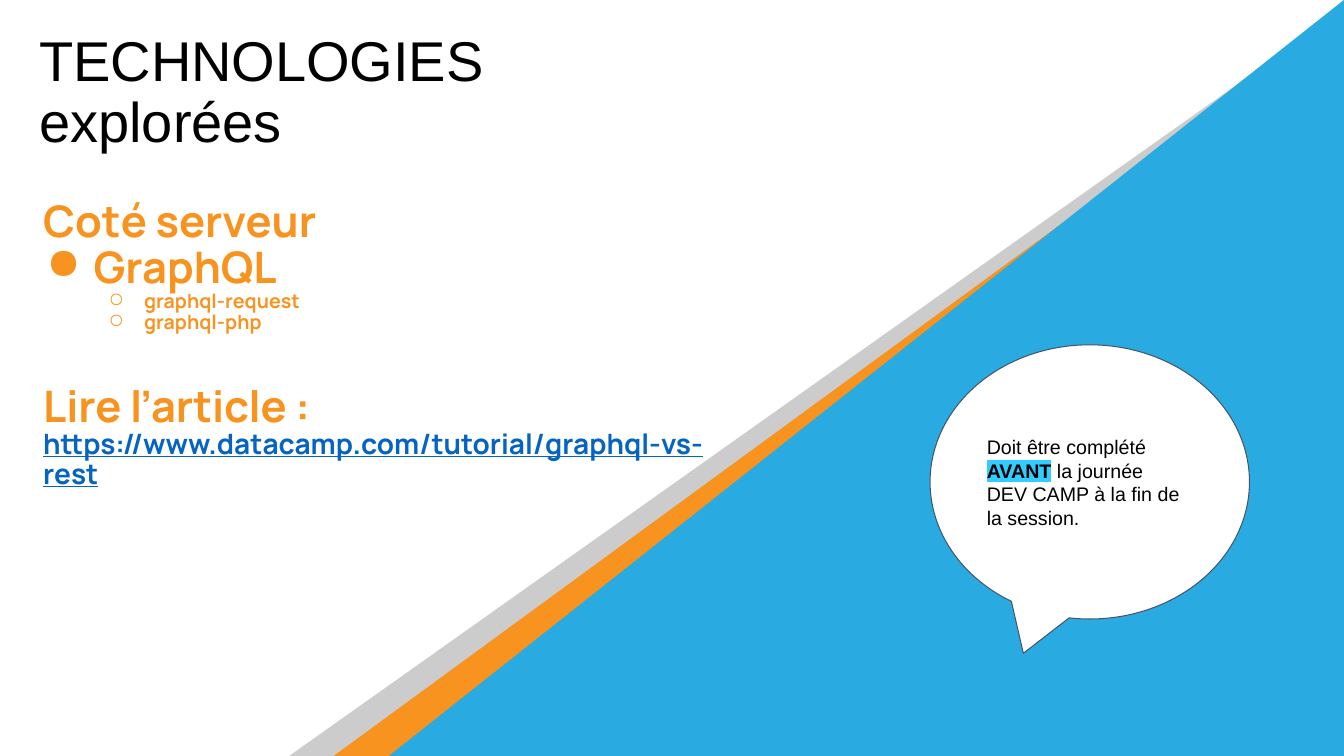
from dataclasses import dataclass

from lxml.etree import SubElement
from pptx import Presentation
from pptx.dml.color import RGBColor
from pptx.enum.shapes import MSO_SHAPE
from pptx.enum.text import MSO_ANCHOR, MSO_AUTO_SIZE, PP_ALIGN
from pptx.oxml.ns import qn
from pptx.util import Cm, Pt


@dataclass(frozen=True)
class Theme:
    black: str = "000000"
    white: str = "FFFFFF"
    grey: str = "CCCCCC"
    orange: str = "F7931E"
    blue: str = "29ABE2"
    link: str = "0563C1"
    outline: str = "44546A"
    highlight: str = "33CCFF"
    sans: str = "Arial"
    display: str = "Manrope"
    title_size: int = 40
    heading_size: int = 31
    link_size: int = 20
    small_size: int = 14


THEME = Theme()
TITLE_ONLY = 5


def set_font(font, name, size, color, bold=False):
    font.name, font.size, font.bold = name, Pt(size), bold
    font.color.rgb = RGBColor.from_string(color)


def fill_shape(shape, color):
    shape.shadow.inherit = False
    shape.fill.solid()
    shape.fill.fore_color.rgb = RGBColor.from_string(color)


def set_margins(frame, margin):
    frame.margin_left = frame.margin_right = margin
    frame.margin_top = frame.margin_bottom = margin


def add_bullet(paragraph, symbol, indent, hanging):
    properties = paragraph._p.get_or_add_pPr()
    properties.set("marL", str(indent))
    properties.set("indent", str(-hanging))
    color = SubElement(properties, qn("a:buClr"))
    SubElement(color, qn("a:srgbClr")).set("val", THEME.orange)
    SubElement(properties, qn("a:buChar")).set("char", symbol)


def highlight_run(run, color):
    properties = run._r.get_or_add_rPr()
    highlight = SubElement(properties, qn("a:highlight"))
    SubElement(highlight, qn("a:srgbClr")).set("val", color)


def place_title(slide, left, top, width, height):
    title = slide.shapes.title
    title.left, title.top, title.width, title.height = left, top, width, height
    frame = title.text_frame
    frame.word_wrap = True
    frame.auto_size = MSO_AUTO_SIZE.NONE
    frame.vertical_anchor = MSO_ANCHOR.BOTTOM
    set_margins(frame, Cm(0.25))
    paragraph = frame.paragraphs[0]
    paragraph.text = "TECHNOLOGIES explorées"
    paragraph.alignment = PP_ALIGN.LEFT
    paragraph.line_spacing = 0.9
    set_font(paragraph.font, THEME.sans, THEME.title_size, THEME.black)


def add_diagonal_bands(slide, right, bottom):
    # Each band: left edge, gap to the right edge, top, colour
    bands = [
        (Cm(7.29), Cm(0.62), Cm(0.66), THEME.grey),
        (Cm(8.41), Cm(0.31), Cm(0.66), THEME.orange),
        (Cm(9.8), Cm(0), Cm(0), THEME.blue),
    ]
    for left, gap, top, color in bands:
        band = slide.shapes.add_shape(
            MSO_SHAPE.RIGHT_TRIANGLE, left, top, right - gap - left, bottom - top)
        band._element.spPr.find(qn("a:xfrm")).set("flipH", "1")
        fill_shape(band, color)
        band.line.fill.background()


def add_server_topics(slide, left, top, width, height):
    frame = slide.shapes.add_textbox(left, top, width, height).text_frame
    frame.word_wrap = True
    main_bullet = ("●", Cm(1.27), Cm(1.19))
    sub_bullet = ("○", Cm(2.54), Cm(0.89))
    # Each line: text, size, colour, level, bullet, space before
    lines = [
        ("Coté serveur", THEME.heading_size, THEME.orange, 0, None, 0),
        ("GraphQL", THEME.heading_size, THEME.orange, 0, main_bullet, 0),
        ("graphql-request", THEME.small_size, THEME.orange, 1, sub_bullet, 0),
        ("graphql-php", THEME.small_size, THEME.orange, 1, sub_bullet, 0),
        ("Lire l’article :", THEME.heading_size, THEME.orange, 0, None, 37),
        ("https://www.datacamp.com/tutorial/graphql-vs-rest",
         THEME.link_size, THEME.link, 0, None, 0),
    ]
    for index, (text, size, color, level, bullet, space) in enumerate(lines):
        paragraph = frame.add_paragraph() if index else frame.paragraphs[0]
        paragraph.text = text
        paragraph.level = level
        if bullet:
            add_bullet(paragraph, *bullet)
        paragraph.alignment = PP_ALIGN.JUSTIFY
        paragraph.line_spacing = 0.88
        paragraph.space_before = Pt(space)
        set_font(paragraph.font, THEME.display, size, color, bold=True)
        paragraph.font.underline = color == THEME.link


def add_deadline_callout(slide, left, top, width, height):
    callout = slide.shapes.add_shape(MSO_SHAPE.OVAL_CALLOUT, left, top, width, height)
    callout.adjustments[0], callout.adjustments[1] = -0.208, 0.625
    fill_shape(callout, THEME.white)
    callout.line.color.rgb = RGBColor.from_string(THEME.outline)
    callout.line.width = Pt(0.75)
    frame = callout.text_frame
    frame.word_wrap = True
    frame.vertical_anchor = MSO_ANCHOR.MIDDLE
    set_margins(frame, Cm(0.25))
    paragraph = frame.paragraphs[0]
    paragraph.alignment = PP_ALIGN.LEFT
    set_font(paragraph.font, THEME.sans, THEME.small_size, THEME.black)
    paragraph.add_run().text = "Doit être complété "
    keyword = paragraph.add_run()
    keyword.text = "AVANT"
    keyword.font.bold = True
    highlight_run(keyword, THEME.highlight)
    paragraph.add_run().text = " la journée "
    paragraph.add_line_break()
    paragraph.add_run().text = "DEV CAMP à la fin de la session."


def build_technologies_slide(presentation):
    slide = presentation.slides.add_slide(presentation.slide_layouts[TITLE_ONLY])
    place_title(slide, Cm(0.74), Cm(2.29), Cm(14.94), Cm(1.85))
    add_diagonal_bands(slide, presentation.slide_width, presentation.slide_height)
    add_server_topics(slide, Cm(0.84), Cm(4.93), Cm(17.78), Cm(8.79))
    add_deadline_callout(slide, Cm(23.44), Cm(8.69), Cm(8.05), Cm(6.91))


def main():
    presentation = Presentation()
    presentation.slide_width = Cm(33.87)
    presentation.slide_height = Cm(19.05)
    build_technologies_slide(presentation)
    presentation.save("out.pptx")


if __name__ == "__main__":
    main()
